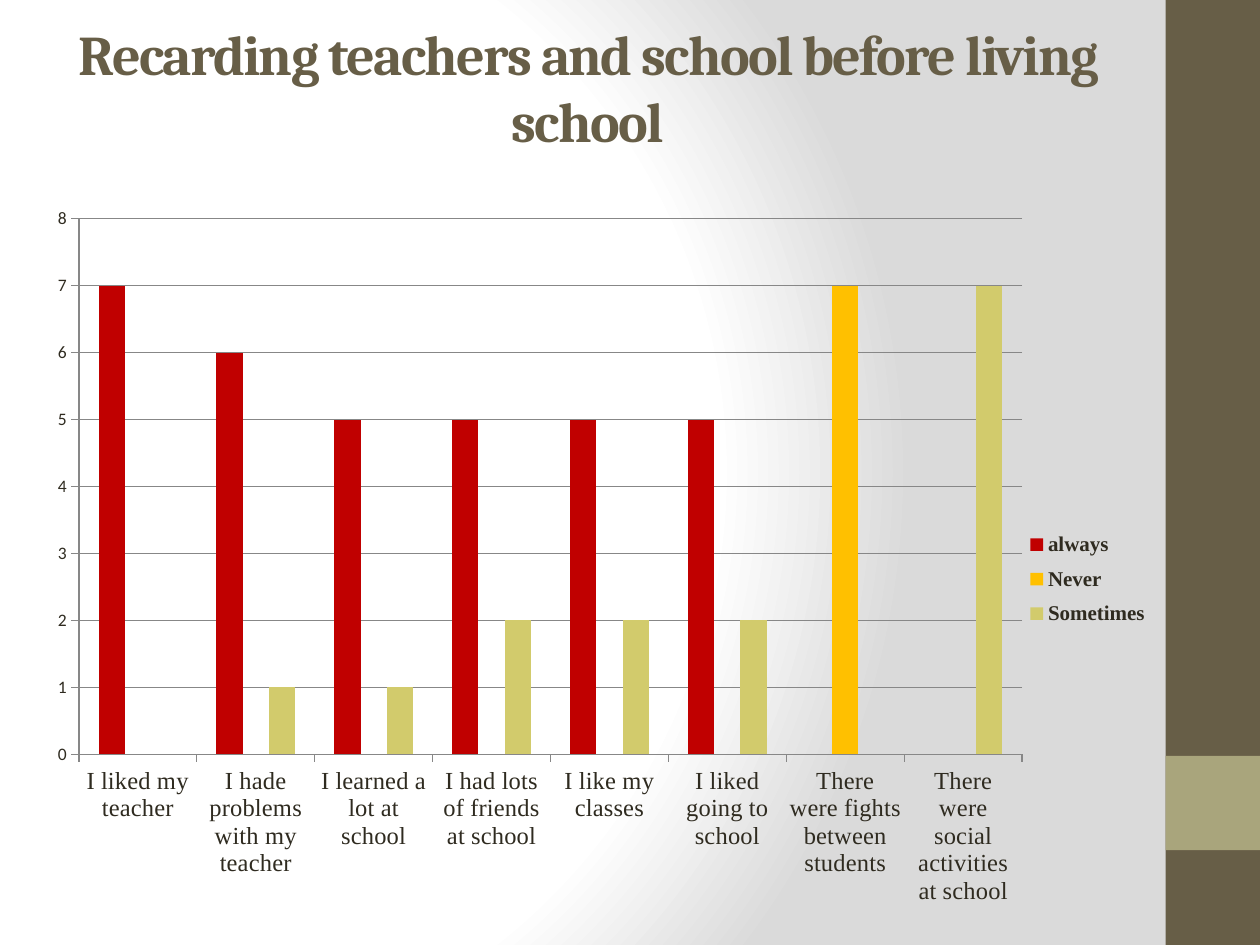
from dataclasses import dataclass

from lxml import etree
from pptx import Presentation
from pptx.chart.data import CategoryChartData
from pptx.dml.color import RGBColor
from pptx.enum.chart import XL_CHART_TYPE, XL_LEGEND_POSITION, XL_TICK_MARK
from pptx.enum.shapes import MSO_SHAPE
from pptx.enum.text import MSO_ANCHOR, MSO_AUTO_SIZE, PP_ALIGN
from pptx.oxml.ns import qn
from pptx.util import Cm, Pt

COLUMNS = XL_CHART_TYPE.COLUMN_CLUSTERED
RIGHT = XL_LEGEND_POSITION.RIGHT
OUTSIDE = XL_TICK_MARK.OUTSIDE
RECT = MSO_SHAPE.RECTANGLE
TITLE_ONLY = 5

TITLE = "Recarding teachers and school before living school"
CATEGORIES = [
    "I liked my teacher",
    "I hade problems with my teacher",
    "I learned a lot at school",
    "I had lots of friends at school",
    "I like my classes",
    "I liked going to school",
    "There were fights between students",
    "There were social activities at school",
]
SERIES = {
    "always": [7, 6, 5, 5, 5, 5, None, None],
    "Never": [None] * 6 + [7, None],
    "Sometimes": [None, 1, 1, 2, 2, 2, None, 7],
}


@dataclass(frozen=True)
class Theme:
    band: str = "675E47"
    accent: str = "A9A57C"
    text: str = "2F2B20"
    grid: str = "878787"
    series: tuple = ("C00000", "FFC000", "D2CB6C")
    backdrop: tuple = ((0, "FFFFFF"), (75, "FFFFFF"), (100, "DADADA"))
    heading: str = "Cambria"
    body: str = "Calibri"
    label: str = "Times New Roman"
    title_size: int = 32
    axis_size: int = 10
    category_size: int = 14
    legend_size: int = 12


def rgb(color):
    return RGBColor.from_string(color)


def set_font(font, name, size, color, bold=False):
    font.name, font.size, font.bold = name, Pt(size), bold
    font.color.rgb = rgb(color)


def set_layout(parent, index, x, y, w, h, inner=False):
    """Place a chart part by fractions of the chart's own area."""
    for old in parent.findall(qn("c:layout")):
        parent.remove(old)
    layout = etree.Element(qn("c:layout"))
    manual = etree.SubElement(layout, qn("c:manualLayout"))
    values = {"layoutTarget": "inner"} if inner else {}
    values.update(xMode="edge", yMode="edge", x=x, y=y, w=w, h=h)
    for tag, value in values.items():
        etree.SubElement(manual, qn(f"c:{tag}"), val=str(value))
    parent.insert(index, layout)


class SlideBuilder:
    def __init__(self, slide, theme):
        self.s = slide
        self.theme = theme

    def background(self):
        """Radial gradient centred a fifth of the way across."""
        self.s.background.fill.gradient()
        grad = self.s.element.find(".//" + qn("a:gradFill"))
        grad.clear()
        stops = etree.SubElement(grad, qn("a:gsLst"))
        for pos, color in self.theme.backdrop:
            stop = etree.SubElement(stops, qn("a:gs"), pos=str(pos * 1000))
            etree.SubElement(stop, qn("a:srgbClr"), val=color)
        shade = etree.SubElement(grad, qn("a:path"), path="circle")
        etree.SubElement(shade, qn("a:fillToRect"),
                         l="20000", t="50000", r="100000", b="50000")

    def block(self, x, y, w, h, color):
        sp = self.s.shapes.add_shape(RECT, Cm(x), Cm(y), Cm(w), Cm(h))
        sp.shadow.inherit = False
        sp.fill.solid()
        sp.fill.fore_color.rgb = rgb(color)
        sp.line.fill.background()

    def title(self, text, x, y, w, h):
        sp = self.s.shapes.title
        sp.left, sp.top, sp.width, sp.height = Cm(x), Cm(y), Cm(w), Cm(h)
        tf = sp.text_frame
        tf.text = text
        tf.word_wrap = True
        tf.auto_size = MSO_AUTO_SIZE.NONE
        tf.vertical_anchor = MSO_ANCHOR.MIDDLE
        p = tf.paragraphs[0]
        p.alignment = PP_ALIGN.CENTER
        font = p.runs[0].font
        set_font(font, self.theme.heading, self.theme.title_size, self.theme.band, True)
        p.runs[0]._r.get_or_add_rPr().set("spc", "-100")

    def column_chart(self, categories, series, x, y, w, h):
        t = self.theme
        data = CategoryChartData(number_format="General")
        data.categories = categories
        for name, values in series.items():
            data.add_series(name, values)
        chart = self.s.shapes.add_chart(COLUMNS, Cm(x), Cm(y), Cm(w), Cm(h), data).chart
        chart.has_title = False
        set_font(chart.font, t.body, t.axis_size, t.text)

        plot = chart.plots[0]
        plot.gap_width, plot.overlap, plot.vary_by_categories = 150, 0, False
        for ser, color in zip(plot.series, t.series):
            ser.format.fill.solid()
            ser.format.fill.fore_color.rgb = rgb(color)
        set_layout(chart._chartSpace.chart.plotArea, 0, 0.038, 0.032, 0.82, 0.74, inner=True)

        self.axes(chart)
        self.legend(chart)

    def axes(self, chart):
        t = self.theme
        cat, val = chart.category_axis, chart.value_axis
        val.minimum_scale, val.maximum_scale, val.major_unit = 0, 8, 1
        val.has_major_gridlines = True
        for part in (cat, val, val.major_gridlines):
            part.format.line.color.rgb = rgb(t.grid)
            part.format.line.width = Pt(0.75)
        for axis in (cat, val):
            axis.major_tick_mark = OUTSIDE
        set_font(cat.tick_labels.font, t.label, t.category_size, t.text)

    def legend(self, chart):
        t = self.theme
        chart.has_legend = True
        legend = chart.legend
        legend.position = RIGHT
        legend.include_in_layout = False
        set_font(legend.font, t.label, t.legend_size, t.text, True)
        set_layout(legend._element, 1, 0.85, 0.45, 0.13, 0.16)


def main():
    prs = Presentation()
    prs.slide_width, prs.slide_height = Cm(25.4), Cm(19.05)
    theme = Theme()
    slide = SlideBuilder(prs.slides.add_slide(prs.slide_layouts[TITLE_ONLY]), theme)
    slide.background()
    slide.block(23.5, 0, 1.9, 19.05, theme.band)
    slide.block(23.5, 15.24, 1.9, 1.9, theme.accent)
    slide.title(TITLE, 1.27, 0.76, 21.16, 1.96)
    slide.column_chart(CATEGORIES, SERIES, 0.71, 3.94, 23.19, 14.6)
    prs.save("out.pptx")


if __name__ == "__main__":
    main()
